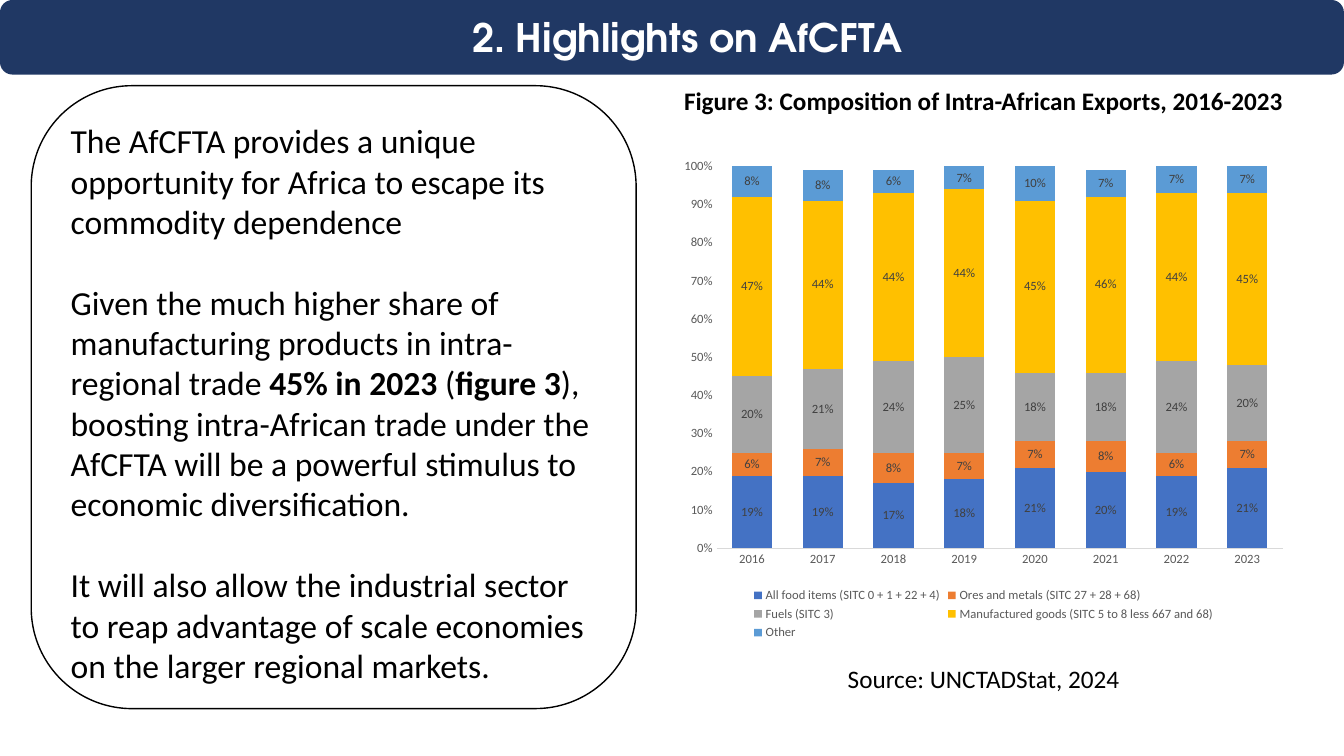
"""Build the AfCFTA highlights slide with its chart of intra-African exports."""
from pptx import Presentation
from pptx.chart.data import CategoryChartData
from pptx.dml.color import RGBColor
from pptx.enum.chart import XL_CHART_TYPE, XL_LEGEND_POSITION, XL_TICK_MARK
from pptx.enum.shapes import MSO_SHAPE
from pptx.enum.text import MSO_ANCHOR, MSO_AUTO_SIZE, PP_ALIGN
from pptx.util import Inches, Pt


def color(hex_code):
    return RGBColor.from_string(hex_code)


def write(frame, paragraphs, size, align=PP_ALIGN.CENTER, font="Calibri",
          ink="000000", bold=False, gap=0, anchor=MSO_ANCHOR.TOP):
    """Fill a frame; text between asterisks switches weight."""
    frame.word_wrap = True
    frame.auto_size = MSO_AUTO_SIZE.NONE
    frame.vertical_anchor = anchor
    for number, text in enumerate(paragraphs):
        paragraph = frame.add_paragraph() if number else frame.paragraphs[0]
        paragraph.alignment = align
        if number:
            paragraph.space_before = Pt(gap)
        for position, piece in enumerate(text.split("*")):
            run = paragraph.add_run()
            run.text = piece
            run.font.name = font
            run.font.size = Pt(size)
            run.font.bold = bold != (position % 2 == 1)
            run.font.color.rgb = color(ink)


deck = Presentation()
deck.slide_width, deck.slide_height = Inches(13.33), Inches(7.5)
slide = deck.slides.add_slide(deck.slide_layouts[5])
shapes = slide.shapes

half = deck.slide_width // 2
column_width = Inches(6.18)
banner_height = Inches(0.74)

banner = shapes.add_shape(MSO_SHAPE.ROUNDED_RECTANGLE, 0, 0, deck.slide_width, banner_height)
banner.shadow.inherit = False
banner.fill.solid()
banner.fill.fore_color.rgb = color("203864")
banner.line.fill.background()
shapes._spTree.insert(2, banner._element)

heading = shapes.title
heading.left, heading.top = 0, 0
heading.width, heading.height = deck.slide_width, banner_height
heading.text_frame.margin_left = Inches(0.4)
write(heading.text_frame, ["2. Highlights on AfCFTA"], 28, font="TeX Gyre Adventor",
      ink="FFFFFF", bold=True, anchor=MSO_ANCHOR.MIDDLE)

export_shares = [
    ("All food items (SITC 0 + 1 + 22 + 4)", "4472C4",
     (0.19, 0.19, 0.17, 0.18, 0.21, 0.20, 0.19, 0.21)),
    ("Ores and metals (SITC 27 + 28 + 68)", "ED7D31",
     (0.06, 0.07, 0.08, 0.07, 0.07, 0.08, 0.06, 0.07)),
    ("Fuels (SITC 3)", "A5A5A5",
     (0.20, 0.21, 0.24, 0.25, 0.18, 0.18, 0.24, 0.20)),
    ("Manufactured goods (SITC 5 to 8 less 667 and 68)", "FFC000",
     (0.47, 0.44, 0.44, 0.44, 0.45, 0.46, 0.44, 0.45)),
    ("Other", "5B9BD5",
     (0.08, 0.08, 0.06, 0.07, 0.10, 0.07, 0.07, 0.07)),
]
export_data = CategoryChartData(number_format="0%")
export_data.categories = [str(year) for year in range(2016, 2024)]
for sector, _, shares in export_shares:
    export_data.add_series(sector, shares)
exports = shapes.add_chart(XL_CHART_TYPE.COLUMN_STACKED, half, Inches(1.48),
                           column_width, Inches(4.91), export_data).chart
exports.has_title = False
exports.font.name = "Calibri"
exports.font.size = Pt(10)
exports.font.color.rgb = color("000000")
exports.has_legend = True
exports.legend.position = XL_LEGEND_POSITION.BOTTOM
exports.legend.include_in_layout = False

years, percent = exports.category_axis, exports.value_axis
for axis in (years, percent):
    axis.major_tick_mark = axis.minor_tick_mark = XL_TICK_MARK.NONE
    axis.has_major_gridlines = False
years.format.line.color.rgb = color("D9D9D9")
years.format.line.width = Pt(0.75)
percent.format.line.fill.background()
percent.minimum_scale, percent.maximum_scale, percent.major_unit = 0, 1, 0.1
percent.tick_labels.number_format = "0%"
percent.tick_labels.number_format_is_linked = False

stack = exports.plots[0]
stack.gap_width, stack.overlap = 75, 100
stack.vary_by_categories = False
label_fonts = [(part.font, "595959")
               for part in (exports.legend, years.tick_labels, percent.tick_labels)]
for series, (_, fill, _) in zip(stack.series, export_shares):
    series.format.fill.solid()
    series.format.fill.fore_color.rgb = color(fill)
    labels = series.data_labels
    labels.show_value = True
    labels.number_format = "0%"
    labels.number_format_is_linked = False
    label_fonts.append((labels.font, "404040"))
for font, ink in label_fonts:
    font.name = "Calibri"
    font.size = Pt(9)
    font.color.rgb = color(ink)

for caption, top, bold in (
        ("Figure 3: Composition of Intra-African Exports, 2016-2023", 0.8, True),
        ("Source: UNCTADStat, 2024", 6.53, False)):
    box = shapes.add_textbox(half, Inches(top), column_width, Inches(0.4))
    write(box.text_frame, [caption], 18, bold=bold)

message = shapes.add_shape(MSO_SHAPE.ROUNDED_RECTANGLE, Inches(0.31), Inches(0.85),
                           Inches(6), Inches(6.18))
message.shadow.inherit = False
message.fill.background()
message.line.color.rgb = color("000000")
message.line.width = Pt(1)
write(message.text_frame, [
    "The AfCFTA provides a unique opportunity for Africa to escape its commodity dependence",
    "Given the much higher share of manufacturing products in intra-regional trade "
    "*45% in 2023 *(*figure 3*), boosting intra-African trade under the AfCFTA will be "
    "a powerful stimulus to economic diversification.",
    "It will also allow the industrial sector to reap advantage of scale economies "
    "on the larger regional markets.",
], 24, align=PP_ALIGN.LEFT, gap=29)

deck.save("out.pptx")
